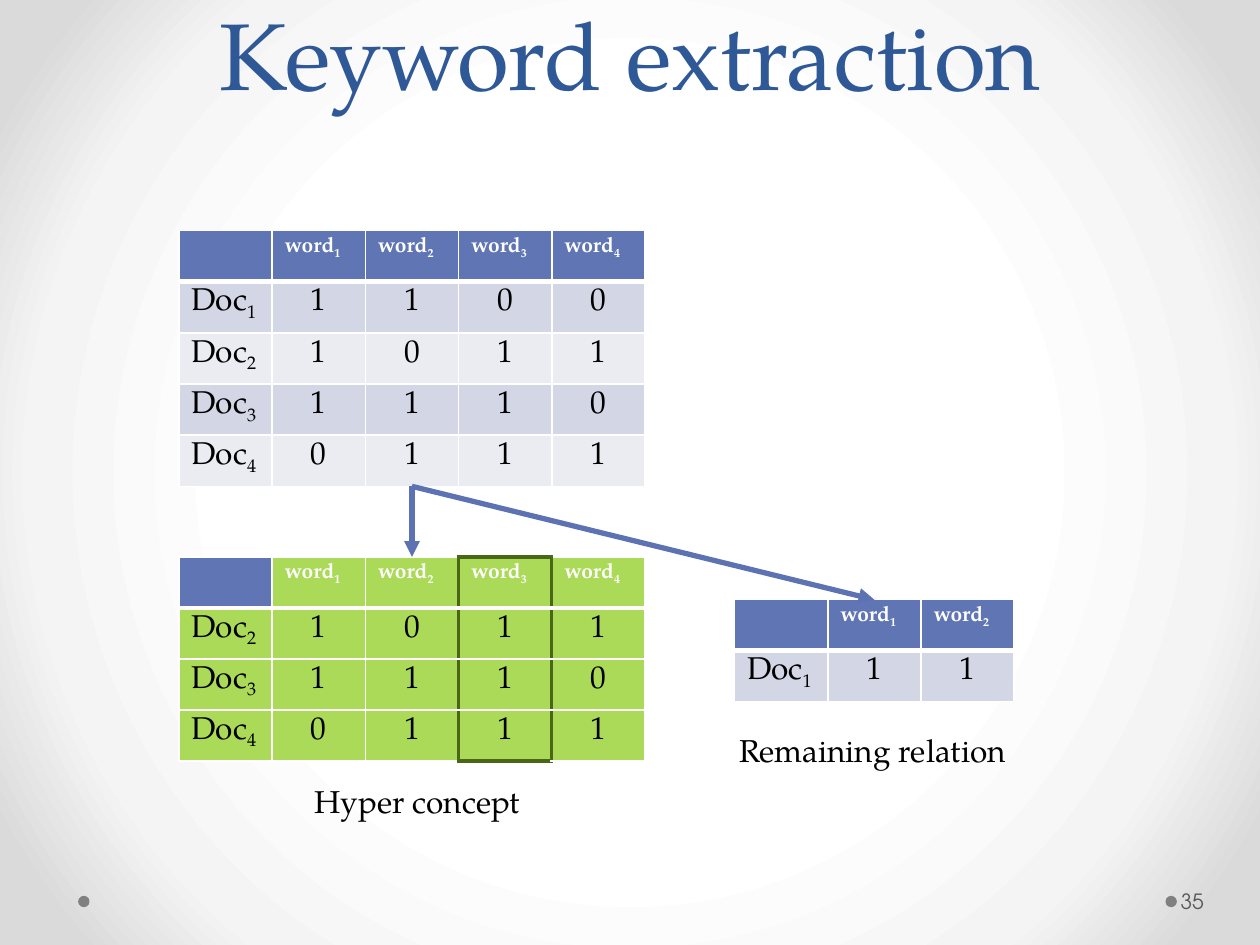
import dataclasses

import pptx
import pptx.dml.color
import pptx.enum.shapes
import pptx.enum.text
import pptx.oxml
import pptx.oxml.ns
import pptx.util

Inches = pptx.util.Inches
Pt = pptx.util.Pt
ANCHOR = pptx.enum.text.MSO_ANCHOR
ALIGN = pptx.enum.text.PP_ALIGN
NS = pptx.oxml.ns.nsdecls("a")


@dataclasses.dataclass(frozen=True)
class Theme:
    serif: str = "TeX Gyre Pagella"
    sans: str = "TeX Gyre Adventor"
    title: str = "2F5897"
    text: str = "000000"
    white: str = "FFFFFF"
    number: str = "595959"
    dot: str = "808080"
    header: str = "6076B4"
    bands: tuple = ("D2D6E5", "EAECF2")
    concept: str = "ABD958"
    highlight: str = "4A6717"
    arrow: str = "5C72B2"
    glow: tuple = ((50, "FFFFFF"), (76, "F4F4F4"), (92, "DADADA"))
    title_size: int = 54
    body_size: int = 18
    small_size: int = 12


THEME = Theme()


def rgb(color):
    return pptx.dml.color.RGBColor.from_string(color)


def set_background(page):
    """Fill the page with a radial gradient, lightest at the centre."""
    page.background.fill.solid()
    solid = page.element.xpath("./p:cSld/p:bg/p:bgPr/a:solidFill")[0]
    stops = "".join(
        f'<a:gs pos="{position * 1000}"><a:srgbClr val="{color}"/></a:gs>'
        for position, color in THEME.glow
    )
    gradient = pptx.oxml.parse_xml(
        f'<a:gradFill {NS} rotWithShape="1"><a:gsLst>{stops}</a:gsLst>'
        '<a:path path="circle"><a:fillToRect l="50000" t="50000" r="50000" b="50000"/></a:path>'
        "</a:gradFill>"
    )
    solid.getparent().replace(solid, gradient)


def add_span(para, text, size, color, font=THEME.serif, bold=False, subscript=False):
    span = para.add_run()
    span.text = text
    span.font.name = font
    span.font.size = Pt(size)
    span.font.color.rgb = rgb(color)
    span.font.bold = bold
    if subscript:
        span.font._element.set("baseline", "-25000")


def add_text(page, text, left, top, width, height, size=THEME.body_size, color=THEME.text,
             font=THEME.serif, align=ALIGN.LEFT, anchor=ANCHOR.TOP, wrap=True,
             line_spacing=None, margin_left=0.1, margin_right=0.1):
    box = page.shapes.add_textbox(Inches(left), Inches(top), Inches(width), Inches(height))
    frame = box.text_frame
    frame.word_wrap = wrap
    frame.vertical_anchor = anchor
    frame.margin_left, frame.margin_right = Inches(margin_left), Inches(margin_right)
    para = frame.paragraphs[0]
    para.alignment = align
    if line_spacing:
        para.line_spacing = Pt(line_spacing)
    add_span(para, text, size, color, font)


def add_dot(page, left, top, size=0.09):
    dot = page.shapes.add_shape(pptx.enum.shapes.MSO_SHAPE.OVAL,
                                Inches(left), Inches(top), Inches(size), Inches(size))
    dot.shadow.inherit = False
    dot.fill.solid()
    dot.fill.fore_color.rgb = rgb(THEME.dot)
    dot.line.fill.background()


def set_borders(cell, edges):
    """Draw the cell's edges, given as side -> (color, points)."""
    properties = cell._tc.get_or_add_tcPr()
    for index, side in enumerate("LRTB"):
        color, points = edges[side]
        properties.insert(index, pptx.oxml.parse_xml(
            f'<a:ln{side} {NS} w="{Pt(points)}"><a:solidFill><a:srgbClr val="{color}"/>'
            f"</a:solidFill></a:ln{side}>"
        ))


def cell_edges(row, column, last_row, marked):
    """White grid, thick rule below the header, frame around the marked column."""
    edges = dict.fromkeys("LRTB", (THEME.white, 1))
    if row == 0:
        edges["B"] = (THEME.white, 3)
    if marked is not None:
        frame = (THEME.highlight, 2.25)
        if column in (marked, marked + 1):
            edges["L"] = frame
        if column in (marked - 1, marked):
            edges["R"] = frame
        if column == marked and row == 0:
            edges["T"] = frame
        if column == marked and row == last_row:
            edges["B"] = frame
    return edges


def add_relation(page, left, top, width, height, documents, fill=None, marked=None):
    """Table of documents against words; documents maps number -> row of digits."""
    columns = 1 + len(next(iter(documents.values())))
    holder = page.shapes.add_table(len(documents) + 1, columns, Inches(left), Inches(top),
                                   Inches(width), Inches(height))
    table = holder.table
    table.first_row = table.horz_banding = False

    # Wording
    for column in range(1, columns):
        para = table.cell(0, column).text_frame.paragraphs[0]
        style = dict(size=THEME.small_size, color=THEME.white, bold=True)
        add_span(para, "word", **style)
        add_span(para, str(column), subscript=True, **style)
    style = dict(size=THEME.body_size, color=THEME.text)
    for row, (number, digits) in enumerate(documents.items(), start=1):
        para = table.cell(row, 0).text_frame.paragraphs[0]
        add_span(para, "Doc", **style)
        add_span(para, str(number), subscript=True, **style)
        for column, digit in enumerate(digits, start=1):
            para = table.cell(row, column).text_frame.paragraphs[0]
            para.alignment = ALIGN.CENTER
            add_span(para, digit, **style)

    # Fills, borders, and no bottom margin so that rows keep their height
    for row in range(len(documents) + 1):
        band = THEME.bands[(row - 1) % 2] if row else THEME.header
        for column in range(columns):
            cell = table.cell(row, column)
            corner = row == column == 0
            cell.margin_bottom = 0
            cell.fill.solid()
            cell.fill.fore_color.rgb = rgb(fill if fill and not corner else band)
            set_borders(cell, cell_edges(row, column, len(documents), marked))
    return holder


def add_arrow(page, source, target):
    """Arrow from the bottom of one table to the top of another."""
    arrow = page.shapes.add_connector(pptx.enum.shapes.MSO_CONNECTOR.STRAIGHT, 0, 0, 0, 0)
    arrow.begin_connect(source, 2)
    arrow.end_connect(target, 0)
    arrow.line.color.rgb = rgb(THEME.arrow)
    arrow.line.width = Pt(3)
    arrow.line._get_or_add_ln().append(pptx.oxml.parse_xml(f'<a:tailEnd {NS} type="triangle"/>'))
    arrow._element.spPr.append(pptx.oxml.parse_xml(f"<a:effectLst {NS}/>"))


def main():
    deck = pptx.Presentation()
    deck.slide_width, deck.slide_height = Inches(10), Inches(7.5)
    page = deck.slides.add_slide(deck.slide_layouts[6])
    set_background(page)

    # Footer dots, title and page number
    for left in (9.25, 0.62):
        add_dot(page, left, 7.11)
    add_text(page, "Keyword extraction", 0.5, 0, 9, 0.92, size=THEME.title_size,
             color=THEME.title, align=ALIGN.CENTER, anchor=ANCHOR.BOTTOM, line_spacing=58)
    add_text(page, "35", 9.34, 6.95, 0.61, 0.4, size=THEME.small_size, color=THEME.number,
             font=THEME.sans, anchor=ANCHOR.MIDDLE, margin_left=0.03, margin_right=0.05)

    # Full relation, and the two parts it splits into
    documents = {1: "1100", 2: "1011", 3: "1110", 4: "0111"}
    concept_documents = {number: documents[number] for number in (2, 3, 4)}
    relation = add_relation(page, 1.42, 1.83, 3.7, 2.03, documents)
    concept = add_relation(page, 1.42, 4.42, 3.7, 1.62, concept_documents,
                           fill=THEME.concept, marked=3)
    remainder = add_relation(page, 5.83, 4.76, 2.22, 0.81, {1: documents[1][:2]})
    for part in (concept, remainder):
        add_arrow(page, relation, part)

    # Captions
    add_text(page, "Hyper concept", 2.4, 6.16, 1.86, 0.4, wrap=False)
    add_text(page, "Remaining relation", 5.77, 5.75, 2.35, 0.4, wrap=False)

    deck.save("out.pptx")


if __name__ == "__main__":
    main()
